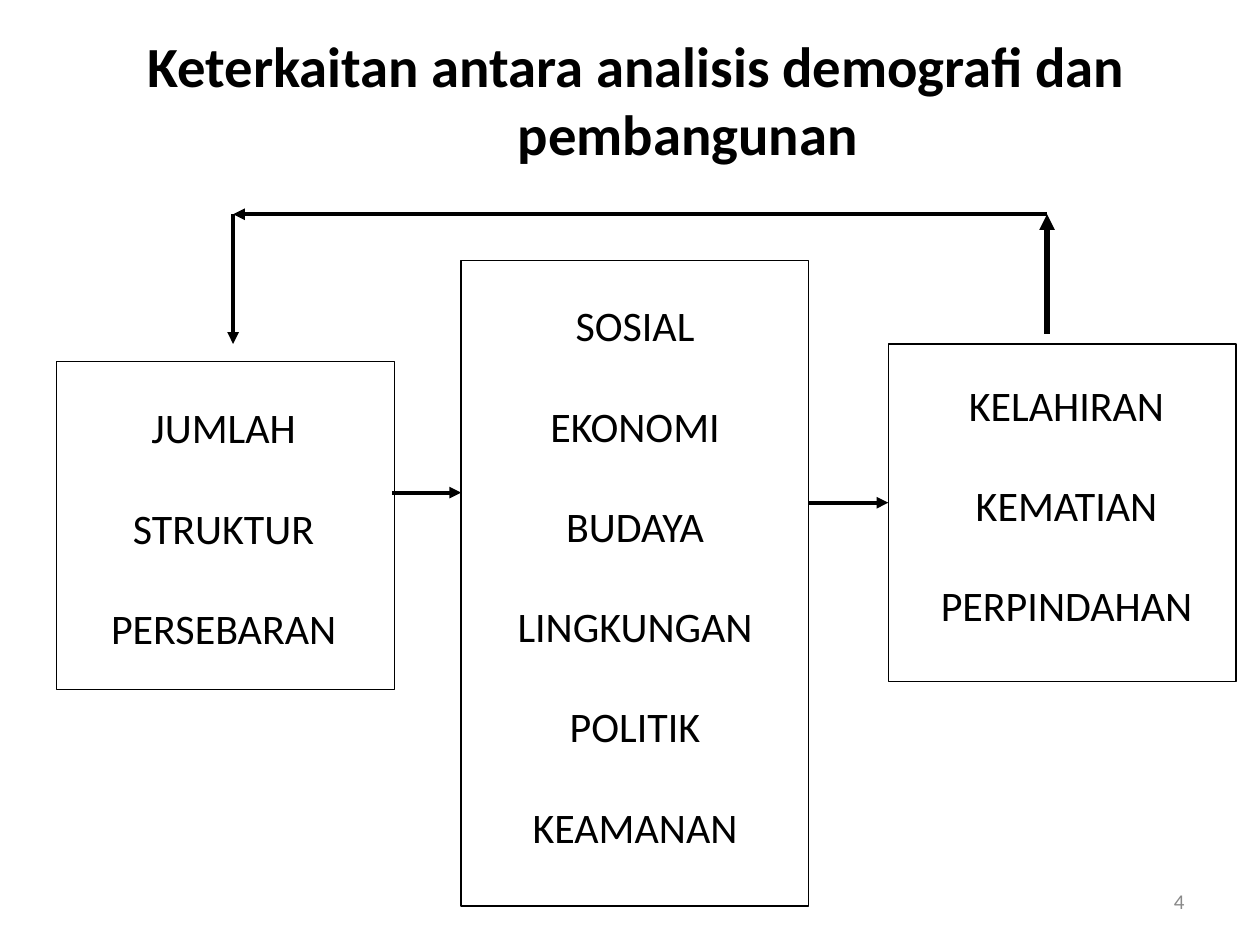
from lxml.etree import SubElement
from pptx import Presentation
from pptx.dml.color import RGBColor
from pptx.enum.shapes import MSO_CONNECTOR, MSO_SHAPE
from pptx.enum.text import MSO_ANCHOR, MSO_AUTO_SIZE, PP_ALIGN
from pptx.oxml.ns import qn
from pptx.util import Inches, Pt

HEADING = " Keterkaitan antara analisis demografi dan pembangunan"
PAGE_NUMBER = "4"

FACTORS = [
    {"words": ["JUMLAH", "STRUKTUR", "PERSEBARAN"], "wrap": False,
     "label": (5.9, 41.87, 23.7, 28), "frame": (4.5, 38.27, 26.8, 34.67)},
    {"words": ["SOSIAL", "EKONOMI", "BUDAYA", "LINGKUNGAN", "POLITIK", "KEAMANAN"],
     "wrap": True,
     "label": (37.5, 31.07, 25.8, 60.53), "frame": (36.6, 27.6, 27.6, 68.27)},
    {"words": ["KELAHIRAN", "KEMATIAN", "PERPINDAHAN"], "wrap": True,
     "label": (70.3, 39.47, 28.7, 28.27), "frame": (70.5, 36.4, 27.6, 35.73)},
]

FEEDBACK_PATH = [(83.1, 35.33), (83.1, 22.67), (18.5, 22.67), (18.5, 36.4)]
FEEDBACK_WIDTHS = [3, 2.25, 2.25]
FLOWS = [((31.1, 52.13), (36.6, 52.13)), ((64.2, 53.2), (70.5, 53.2))]

THEME = {
    "font": "Calibri",
    "ink": RGBColor(0, 0, 0),
    "paper": RGBColor(255, 255, 255),
    "muted": RGBColor(0x89, 0x89, 0x89),
    "heading": Pt(32.4), "word": Pt(24), "number": Pt(12),
    "frame_line": Pt(0.75),
    "word_gap": Pt(28.5),
    "hang": Inches(0.92),
}

deck = Presentation()
deck.slide_width, deck.slide_height = Inches(10), Inches(7.5)
slide = deck.slides.add_slide(deck.slide_layouts[5])


def share(*percents):
    sides = (deck.slide_width, deck.slide_height)
    return [round(sides[i % 2] * p / 100) for i, p in enumerate(percents)]


def apply(target, **values):
    for key, value in values.items():
        setattr(target, key, value)


def write(holder, lines, size, color, align, bold=False, gap=Pt(0), **frame_format):
    body = holder.text_frame
    body.text = "\n".join(lines)
    apply(body, **frame_format)
    for row, paragraph in enumerate(body.paragraphs):
        apply(paragraph, alignment=align, space_before=gap if row else Pt(0))
        for run in paragraph.runs:
            apply(run.font, name=THEME["font"], size=size, bold=bold)
            run.font.color.rgb = color


def add_box(area):
    box = slide.shapes.add_shape(MSO_SHAPE.RECTANGLE, *share(*area))
    box.shadow.inherit = False
    return box


def add_arrow(start, end, width=2.25):
    arrow = slide.shapes.add_connector(MSO_CONNECTOR.STRAIGHT, *share(*start, *end))
    arrow.line.color.rgb = THEME["ink"]
    arrow.line.width = Pt(width)
    SubElement(arrow.line._get_or_add_ln(), qn("a:tailEnd"), type="triangle")
    SubElement(arrow._element.spPr, qn("a:effectLst"))


heading = slide.shapes.title
apply(heading, **dict(zip(("left", "top", "width", "height"),
                          share(5, 2.13, 90, 16.67))))
write(heading, [HEADING], THEME["heading"], THEME["ink"], PP_ALIGN.CENTER, bold=True,
      vertical_anchor=MSO_ANCHOR.MIDDLE, auto_size=MSO_AUTO_SIZE.NONE, word_wrap=True)
hanging = heading.text_frame.paragraphs[0]._p.get_or_add_pPr()
hanging.set("marL", str(THEME["hang"]))
hanging.set("indent", str(-THEME["hang"]))

page_number = slide.shapes.add_textbox(*share(71.7, 92.67, 23.3, 5.33))
write(page_number, [PAGE_NUMBER], THEME["number"], THEME["muted"], PP_ALIGN.RIGHT,
      vertical_anchor=MSO_ANCHOR.MIDDLE, word_wrap=True)

for factor in FACTORS:
    label = add_box(factor["label"])
    label.fill.solid()
    label.fill.fore_color.rgb = THEME["paper"]
    label.line.fill.background()
    write(label, factor["words"], THEME["word"], THEME["ink"], PP_ALIGN.CENTER,
          gap=THEME["word_gap"], vertical_anchor=MSO_ANCHOR.TOP,
          word_wrap=factor["wrap"])

for factor in FACTORS:
    frame = add_box(factor["frame"])
    frame.fill.background()
    frame.line.color.rgb = THEME["ink"]
    frame.line.width = THEME["frame_line"]

for start, end, width in zip(FEEDBACK_PATH, FEEDBACK_PATH[1:], FEEDBACK_WIDTHS):
    add_arrow(start, end, width)
for start, end in FLOWS:
    add_arrow(start, end)

deck.save("out.pptx")
